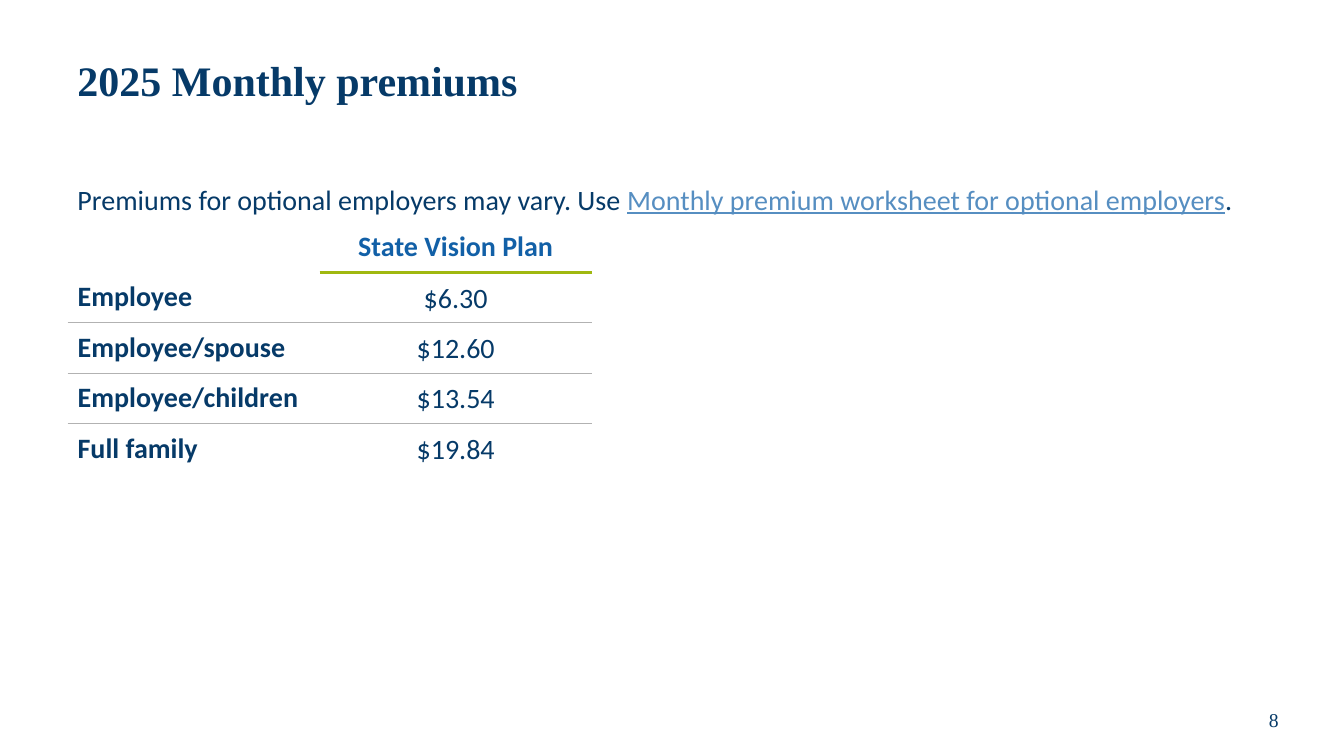
import pptx
import pptx.util
import pptx.dml.color
import pptx.enum.text
import pptx.oxml.ns
from lxml import etree

RGB = pptx.dml.color.RGBColor
NAVY = RGB(0x06, 0x3A, 0x68)
BLUE = RGB(0x12, 0x60, 0xA7)
LINK = RGB(0x56, 0x8E, 0xC1)
LIME = RGB(0xA0, 0xB8, 0x10)
GREY = RGB(0xB2, 0xB2, 0xB2)

ALIGN = pptx.enum.text.PP_ALIGN
MID = pptx.enum.text.MSO_ANCHOR.MIDDLE
TOP = pptx.enum.text.MSO_ANCHOR.TOP
SCALE = 9144  # EMU per px, 100 px to the inch


def px(num):
    return pptx.util.Emu(num * SCALE)


class Deck:
    """Holds the text style and the current slide."""

    base = {"name": "Calibri", "size": pptx.util.Pt(20), "bold": False}

    def __init__(self, wide, high):
        self.prs = pptx.Presentation()
        self.prs.slide_width, self.prs.slide_height = px(wide), px(high)
        self.slide = self.prs.slides.add_slide(self.prs.slide_layouts[6])

    def put(self, para, runs, align=ALIGN.LEFT, space=1.0):
        para.alignment, para.line_spacing = align, space
        for text, color, form in runs:
            run = para.add_run()
            run.text = text
            for key, val in {**self.base, **form}.items():
                setattr(run.font, key, val)
            run.font.color.rgb = color

    def text(self, box, runs, anchor=MID, **form):
        frame = self.slide.shapes.add_textbox(*map(px, box)).text_frame
        frame.word_wrap = True
        frame.vertical_anchor = anchor
        self.put(frame.paragraphs[0], runs, **form)

    def edge(self, cell, tag, line):
        props = cell._tc.get_or_add_tcPr()
        node = etree.SubElement(props, pptx.oxml.ns.qn("a:" + tag))
        if line is None:
            etree.SubElement(node, pptx.oxml.ns.qn("a:noFill"))
            return
        color, width = line
        node.set("w", str(pptx.util.Pt(width)))
        fill = etree.SubElement(node, pptx.oxml.ns.qn("a:solidFill"))
        etree.SubElement(fill, pptx.oxml.ns.qn("a:srgbClr"), val=str(color))

    def table(self, left, top, cols, high, rows, rule):
        """Each cell is (runs, format); rule(row, col) gives the line below."""
        box = (left, top, sum(cols), high * len(rows))
        grid = self.slide.shapes.add_table(
            len(rows), len(cols), *map(px, box)).table
        grid.first_row = grid.horz_banding = False
        for col, wide in zip(grid.columns, cols):
            col.width = px(wide)
        for r, row in enumerate(rows):
            grid.rows[r].height = px(high)
            for c, (runs, form) in enumerate(row):
                cell = grid.cell(r, c)
                cell.vertical_anchor = MID
                for tag, line in (("lnL", None), ("lnR", None),
                                  ("lnT", rule(r - 1, c)), ("lnB", rule(r, c))):
                    self.edge(cell, tag, line)
                cell.fill.background()
                self.put(cell.text_frame.paragraphs[0], runs, **form)


def main():
    deck = Deck(1333, 750)
    serif = {"name": "Times New Roman"}
    bold = {"bold": True}

    # Page number and title
    deck.text((1205, 689, 117, 50),
              [("8", NAVY, {**serif, "size": pptx.util.Pt(14)})],
              align=ALIGN.CENTER)
    deck.text((67, 25, 1200, 115),
              [("2025 Monthly premiums", NAVY,
                {**serif, **bold, "size": pptx.util.Pt(30)})], space=0.9)

    # Note above the table
    deck.text((67, 176, 1200, 44), [
        ("Premiums for optional employers may vary. Use ", NAVY, {}),
        ("Monthly premium worksheet for optional employers", LINK,
         {"underline": True}),
        (".", NAVY, {})], anchor=TOP)

    # Premium table
    costs = {"Employee": "$6.30", "Employee/spouse": "$12.60",
             "Employee/children": "$13.54", "Full family": "$19.84"}
    head = [([], {}),
            ([("State Vision Plan", BLUE, bold)], {"align": ALIGN.CENTER})]
    rows = [head] + [
        [([(who, NAVY, bold)], {}),
         ([(cost, NAVY, {})], {"align": ALIGN.CENTER, "space": 1.07})]
        for who, cost in costs.items()]

    def rule(row, col):
        if row == 0:
            return (LIME, 2.25) if col else None
        return (GREY, 0.5) if 0 < row < len(costs) else None

    deck.table(67, 220, (250, 270), 50, rows, rule)

    deck.prs.save("out.pptx")


if __name__ == "__main__":
    main()
